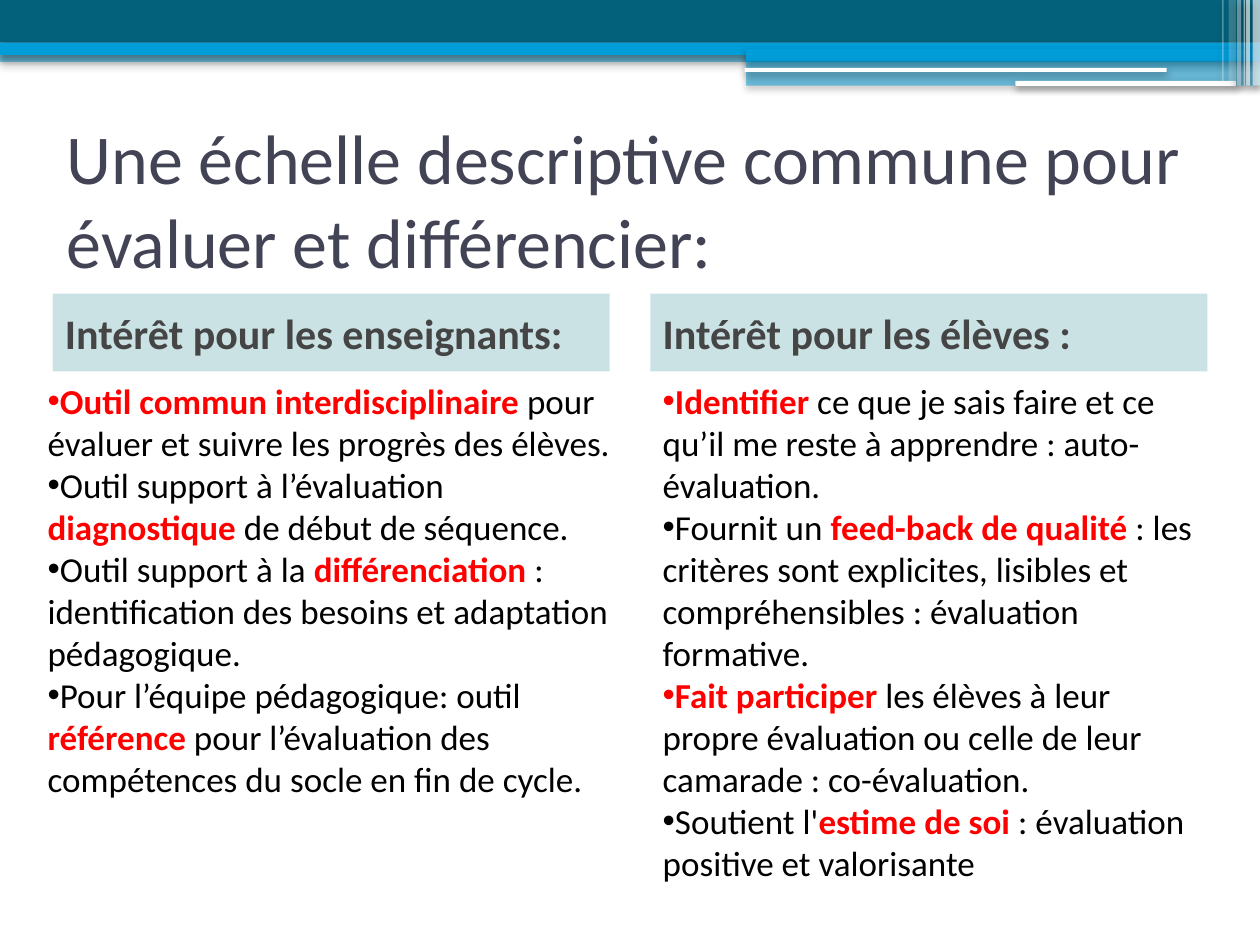
from lxml.etree import SubElement
from pptx import Presentation
from pptx.dml.color import RGBColor
from pptx.enum.shapes import MSO_SHAPE as Shape
from pptx.enum.text import MSO_ANCHOR as Anchor, MSO_AUTO_SIZE as AutoSize, PP_ALIGN as Align
from pptx.oxml.ns import qn
from pptx.util import Cm, Pt

BLACK, WHITE, RED = "000000", "FFFFFF", "FF0000"
TEAL, BLUE = "04617B", "009DD9"

BANDS = [
    (0, 1.02, 25.4, 0.23, BLUE, 50),
    (0, 0, 25.4, 0.86, TEAL, 100),
    (0, 0.86, 25.4, 0.25, BLUE, 100),
    (15.04, 0.99, 10.36, 0.25, BLUE, 100),
    (15.04, 1.22, 10.36, 0.51, BLUE, 50),
]
RULES = [(15.01, 1.37, 8.51, 0.08), (20.47, 1.63, 4.45, 0.1)]
STRIPES = [
    (25.25, 0.15, 1.73, 66),
    (25.12, 0.08, 1.73, 66),
    (25.07, 0.03, 1.73, 60),
    (24.94, 0.08, 1.73, 40),
    (24.77, 0.15, 1.63, 20),
    (24.64, 0.03, 1.63, 31),
]

TITLE = "Une échelle descriptive commune pour évaluer et différencier:"
COLUMNS = [
    {
        "heading": "Intérêt pour les enseignants:",
        "heading_left": 1.06,
        "body": (0.71, 12.4),
        "items": [
            ("", "Outil commun interdisciplinaire",
             " pour évaluer et suivre les progrès des élèves."),
            ("Outil support à l’évaluation ", "diagnostique", " de début de séquence."),
            ("Outil support à la ", "différenciation",
             " : identification des besoins et adaptation pédagogique."),
            ("Pour l’équipe pédagogique: outil ", "référence",
             " pour l’évaluation des compétences du socle en fin de cycle."),
        ],
    },
    {
        "heading": "Intérêt pour les élèves :",
        "heading_left": 13.11,
        "body": (13.11, 11.23),
        "items": [
            ("", "Identifier",
             " ce que je sais faire et ce qu’il me reste à apprendre : auto-évaluation."),
            ("Fournit un ", "feed-back de qualité",
             " : les critères sont explicites, lisibles et compréhensibles : évaluation formative."),
            ("", "Fait participer",
             " les élèves à leur propre évaluation ou celle de leur camarade : co-évaluation."),
            ("Soutient l'", "estime de soi", " : évaluation positive et valorisante"),
        ],
    },
]


def rgb(color):
    return RGBColor.from_string(color)


def add_shadow(sp):
    effects = SubElement(sp._element.spPr, qn("a:effectLst"))
    shadow = SubElement(effects, qn("a:outerShdw"), blurRad=str(Pt(4.1)),
                        dist=str(Pt(2)), dir="5400000", algn="ctr", rotWithShape="0")
    color = SubElement(shadow, qn("a:srgbClr"), val=BLACK)
    SubElement(color, qn("a:alpha"), val="40000")


def add_box(s, left, top, width, height, color, opacity=100, kind=Shape.RECTANGLE, shadow=False):
    sp = s.shapes.add_shape(kind, Cm(left), Cm(top), Cm(width), Cm(height))
    sp.fill.solid()
    sp.fill.fore_color.rgb = rgb(color)
    sp.line.fill.background()
    if opacity < 100:
        fill = sp._element.spPr.find(qn("a:solidFill"))
        SubElement(fill[0], qn("a:alpha"), val=str(opacity * 1000))
    if shadow:
        add_shadow(sp)
    else:
        sp.shadow.inherit = False
    return sp


def add_run(p, text, size, color, bold=False):
    r = p.add_run()
    r.text = text
    for name, value in {"name": "Calibri", "size": Pt(size), "bold": bold}.items():
        setattr(r.font, name, value)
    r.font.color.rgb = rgb(color)


def format_frame(tf, anchor):
    frame_format = {"word_wrap": True, "auto_size": AutoSize.NONE, "vertical_anchor": anchor}
    for name, value in frame_format.items():
        setattr(tf, name, value)


def add_header(s):
    for *place, color, opacity in BANDS:
        add_box(s, *place, color, opacity, shadow=True)
    for place in RULES:
        rule = add_box(s, *place, WHITE, kind=Shape.ROUNDED_RECTANGLE, shadow=True)
        rule.adjustments[0] = 0.14
    for left, width, height, opacity in STRIPES:
        add_box(s, left, 0, width, height, WHITE, opacity, shadow=True)


def set_title(s):
    title = s.shapes.title
    place = {"left": 1.09, "top": 2.51, "width": 23.29, "height": 2.97}
    for name, value in place.items():
        setattr(title, name, Cm(value))
    format_frame(title.text_frame, Anchor.MIDDLE)
    p = title.text_frame.paragraphs[0]
    p.alignment = Align.LEFT
    add_run(p, TITLE, 40, "424456")


def add_heading(s, text, left):
    sp = add_box(s, left, 5.92, 11.23, 1.57, "328E97", 25)
    format_frame(sp.text_frame, Anchor.MIDDLE)
    p = sp.text_frame.paragraphs[0]
    p.alignment = Align.LEFT
    add_run(p, text, 24, "454545", True)


def add_bullets(s, items, left, width):
    sp = s.shapes.add_textbox(Cm(left), Cm(7.52), Cm(width), Cm(10.8))
    tf = sp.text_frame
    format_frame(tf, Anchor.TOP)
    for i, (before, key, after) in enumerate(items):
        p = tf.add_paragraph() if i else tf.paragraphs[0]
        properties = p._p.get_or_add_pPr()
        SubElement(properties, qn("a:buFont"), typeface="Arial")
        SubElement(properties, qn("a:buChar"), char="•")
        if before:
            add_run(p, before, 20, BLACK)
        add_run(p, key, 20, RED, True)
        add_run(p, after, 20, BLACK)


def main():
    prs = Presentation()
    prs.slide_width, prs.slide_height = Cm(25.4), Cm(19.05)
    s = prs.slides.add_slide(prs.slide_layouts[5])
    add_header(s)
    set_title(s)
    for column in COLUMNS:
        add_heading(s, column["heading"], column["heading_left"])
    for column in COLUMNS:
        add_bullets(s, column["items"], *column["body"])
    prs.save("out.pptx")


if __name__ == "__main__":
    main()
